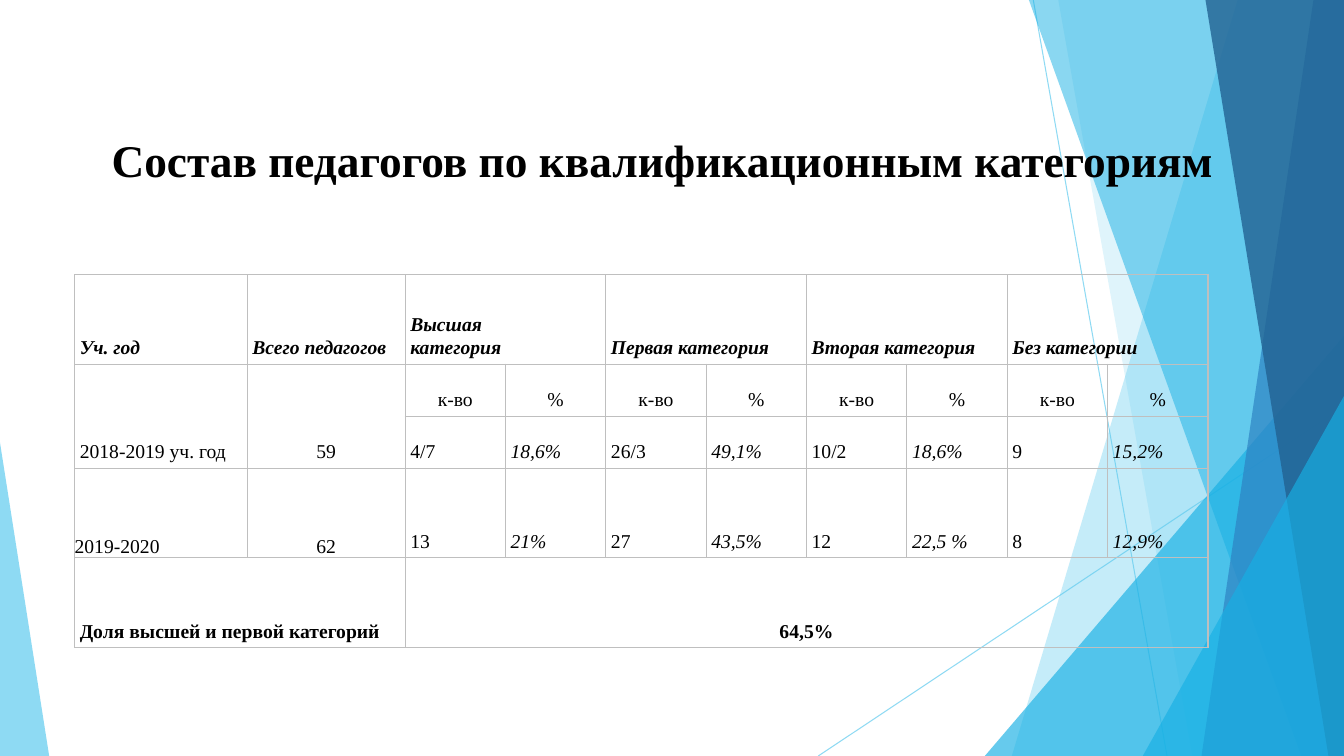
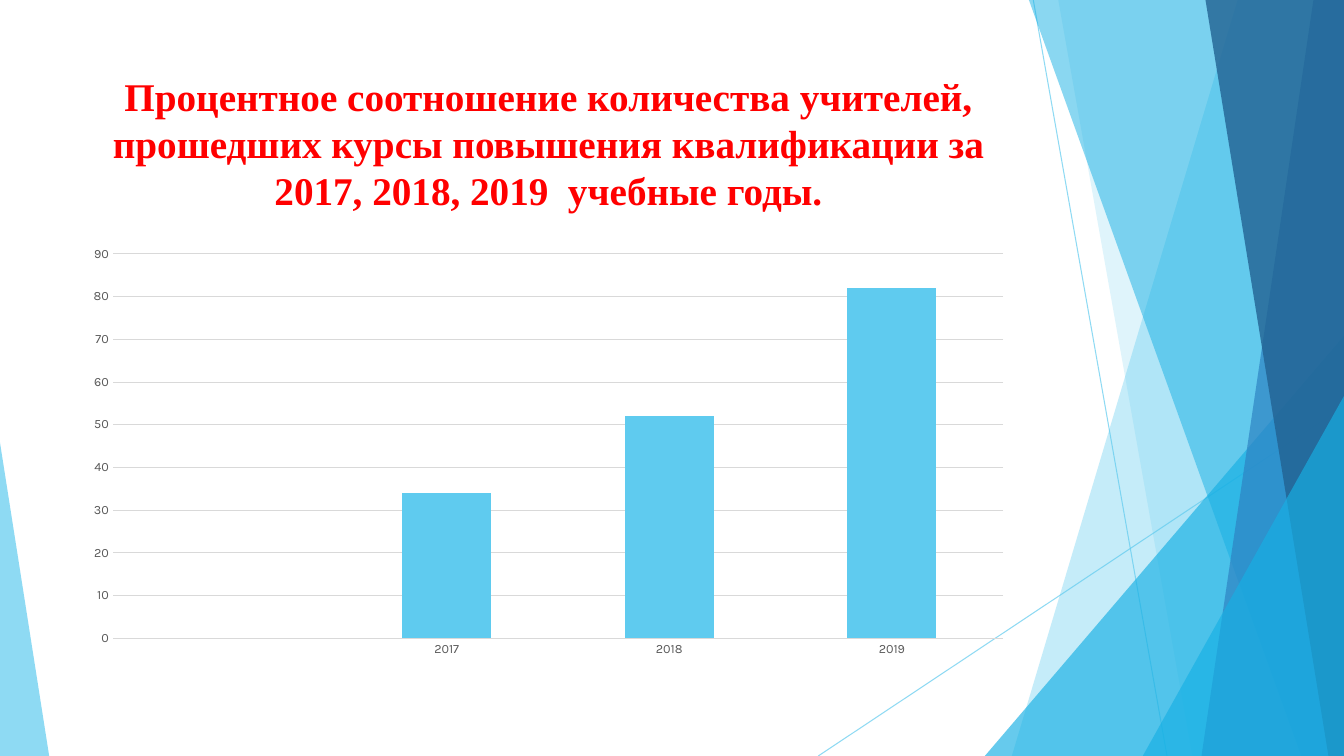
"""Build two slides on teachers' qualification categories and training."""
from dataclasses import dataclass

from lxml.etree import SubElement
from pptx import Presentation
from pptx.chart.data import CategoryChartData
from pptx.dml.color import RGBColor
from pptx.enum.chart import XL_CHART_TYPE, XL_TICK_MARK
from pptx.enum.shapes import MSO_CONNECTOR, MSO_SHAPE
from pptx.enum.text import MSO_ANCHOR, PP_ALIGN
from pptx.oxml import parse_xml
from pptx.oxml.ns import nsdecls, qn
from pptx.util import Cm, Pt

WIDTH, HEIGHT = 33.87, 19.05
MARGIN, TITLE_TOP, TITLE_HEIGHT = 1.88, 1.7, 3.66
SKY, CYAN, BLUE, NAVY = "5FCBEF", "17B0E4", "2E83C3", "226292"
BLACK, RED, BORDER, GRID, AXIS_TEXT = "000000", "FF0000", "BFBFBF", "D9D9D9", "595959"
SERIF, SANS = "Times New Roman", "Karla"


@dataclass
class Band:
    """A full-height band that reaches the right edge of the slide."""
    top_x: float
    bottom_x: float
    color: str
    alpha: int


@dataclass
class Wedge:
    """A triangle that stands on the bottom edge of the slide."""
    left: float
    top: float
    width: float
    apex: float
    color: str
    alpha: int


@dataclass
class Ray:
    """A thin line across the backdrop."""
    x1: float
    y1: float
    x2: float
    y2: float


@dataclass
class Entry:
    """A table cell with its text, format and span."""
    row: int
    col: int
    text: str
    bold: bool = False
    italic: bool = False
    center: bool = False
    rows: int = 1
    cols: int = 1
    inset: float = 0.13


RAYS = [Ray(26.04, 0, 29.41, HEIGHT), Ray(WIDTH, 10.24, 20.62, HEIGHT)]
BACKDROP = [
    Band(31.19, 25.5, SKY, 36),
    Band(26.67, 30.05, SKY, 20),
    Wedge(24.82, 8.46, 9.05, 1, CYAN, 66),
    Band(25.93, 32.79, CYAN, 50),
    Band(33.1, 30.28, BLUE, 70),
    Band(30.38, 33.48, NAVY, 80),
    Wedge(28.8, 9.98, 5.07, 1, CYAN, 66),
    Wedge(0, 11.15, 1.24, 0, SKY, 70),
]
COL_WIDTHS = [4.35, 3.98] + [2.53] * 8
ROW_HEIGHTS = [2.26, 1.31, 1.31, 2.26, 2.26]
CATEGORIES = ["Высшая\nкатегория", "Первая категория", "Вторая категория", "Без категории"]
RESULTS = {
    2: ["4/7", "18,6%", "26/3", "49,1%", "10/2", "18,6%", "9", "15,2%"],
    3: ["13", "21%", "27", "43,5%", "12", "22,5 %", "8", "12,9%"],
}


def rgb(color: str) -> RGBColor:
    """Turn a hex string into a colour."""
    return RGBColor.from_string(color)


def set_alpha(sp, alpha: int) -> None:
    """Give every colour of a shape an opacity in percent."""
    for clr in sp._element.xpath(".//p:spPr//a:srgbClr"):
        SubElement(clr, qn("a:alpha"), val=str(alpha * 1000))


def write(tf, text: str, *, size: float, color: str = BLACK, bold: bool = False,
          italic: bool = False, center: bool = False, spacing: float = 1.0,
          gap: float = 0) -> None:
    """Fill a text frame, one paragraph per line of text."""
    for i, line in enumerate(text.split("\n")):
        p = tf.add_paragraph() if i else tf.paragraphs[0]
        p.alignment = PP_ALIGN.CENTER if center else PP_ALIGN.LEFT
        p.line_spacing = spacing
        p.space_before = p.space_after = Pt(gap)
        r = p.add_run()
        r.text = line
        r.font.name, r.font.size = SERIF, Pt(size)
        r.font.bold, r.font.italic = bold, italic
        r.font.color.rgb = rgb(color)


def add_ray(s, ray: Ray) -> None:
    """Draw one thin line."""
    sp = s.shapes.add_connector(MSO_CONNECTOR.STRAIGHT, Cm(ray.x1), Cm(ray.y1),
                                Cm(ray.x2), Cm(ray.y2))
    sp.line.color.rgb = rgb(SKY)
    sp.line.width = Pt(0.75)
    set_alpha(sp, 70)
    SubElement(sp._element.spPr, qn("a:effectLst"))


def add_facet(s, facet: Band | Wedge) -> None:
    """Draw one translucent band or wedge."""
    if isinstance(facet, Band):
        builder = s.shapes.build_freeform(Cm(facet.top_x), 0)
        builder.add_line_segments([(Cm(WIDTH), 0), (Cm(WIDTH), Cm(HEIGHT)),
                                   (Cm(facet.bottom_x), Cm(HEIGHT))])
        sp = builder.convert_to_shape()
    else:
        sp = s.shapes.add_shape(MSO_SHAPE.ISOSCELES_TRIANGLE, Cm(facet.left), Cm(facet.top),
                                Cm(facet.width), Cm(HEIGHT - facet.top))
        sp.adjustments[0] = facet.apex
    sp.shadow.inherit = False
    sp.line.fill.background()
    sp.fill.solid()
    sp.fill.fore_color.rgb = rgb(facet.color)
    set_alpha(sp, facet.alpha)


def new_slide(prs):
    """Add a blank slide with the shared backdrop."""
    s = prs.slides.add_slide(prs.slide_layouts[6])
    for ray in RAYS:
        add_ray(s, ray)
    for facet in BACKDROP:
        add_facet(s, facet)
    return s


def add_title(s, text: str, width: float, inset_top: float = 0.13, **fmt) -> None:
    """Add a bold centred title."""
    sp = s.shapes.add_textbox(Cm(MARGIN), Cm(TITLE_TOP), Cm(width), Cm(TITLE_HEIGHT))
    tf = sp.text_frame
    tf.word_wrap = True
    tf.vertical_anchor = MSO_ANCHOR.TOP
    tf.margin_top = Cm(inset_top)
    write(tf, text, bold=True, center=True, **fmt)


def set_borders(cell) -> None:
    """Draw thin grey borders on the four sides of a cell."""
    tc_pr = cell._tc.get_or_add_tcPr()
    for i, side in enumerate("LRTB"):
        tc_pr.insert(i, parse_xml(
            f'<a:ln{side} {nsdecls("a")} w="12700"><a:solidFill>'
            f'<a:srgbClr val="{BORDER}"/></a:solidFill></a:ln{side}>'))


def table_entries() -> list[Entry]:
    """List the cells of the category table."""
    entries = [
        Entry(0, 0, "Уч. год", bold=True, italic=True),
        Entry(0, 1, "Всего педагогов", bold=True, italic=True),
        Entry(1, 0, "2018-2019 уч. год", rows=2),
        Entry(1, 1, "59", center=True, rows=2),
        Entry(3, 0, "2019-2020", inset=0),
        Entry(3, 1, "62", center=True, inset=0),
        Entry(4, 0, "Доля высшей и первой категорий", bold=True, cols=2),
        Entry(4, 2, "64,5%", bold=True, center=True, cols=8),
    ]
    for i, category in enumerate(CATEGORIES):
        col = 2 + 2 * i
        entries.append(Entry(0, col, category, bold=True, italic=True, cols=2))
        entries.append(Entry(1, col, "к-во", center=True))
        entries.append(Entry(1, col + 1, "%", center=True))
    for row, values in RESULTS.items():
        for i, value in enumerate(values):
            entries.append(Entry(row, 2 + i, value, italic=i % 2 == 1))
    return entries


def add_category_table(s) -> None:
    """Add the table of teachers by category."""
    table = s.shapes.add_table(len(ROW_HEIGHTS), len(COL_WIDTHS), Cm(MARGIN), Cm(6.92),
                               Cm(sum(COL_WIDTHS)), Cm(sum(ROW_HEIGHTS))).table
    table.first_row = table.horz_banding = False
    for column, width in zip(table.columns, COL_WIDTHS):
        column.width = Cm(width)
    for row, height in zip(table.rows, ROW_HEIGHTS):
        row.height = Cm(height)
    for cell in table.iter_cells():
        cell.fill.background()
        set_borders(cell)
    for e in table_entries():
        cell = table.cell(e.row, e.col)
        if e.rows * e.cols > 1:
            cell.merge(table.cell(e.row + e.rows - 1, e.col + e.cols - 1))
        cell.vertical_anchor = MSO_ANCHOR.BOTTOM
        cell.margin_left = cell.margin_right = Cm(e.inset)
        cell.margin_top = cell.margin_bottom = Cm(e.inset)
        write(cell.text_frame, e.text, size=14, bold=e.bold, italic=e.italic,
              center=e.center, spacing=1.07)


def add_training_chart(s) -> None:
    """Add the column chart of trained teachers by year."""
    data = CategoryChartData()
    data.categories = ["", "2017", "2018", "2019"]
    data.add_series("Series 1", [None, 34, 52, 82])
    chart = s.shapes.add_chart(XL_CHART_TYPE.COLUMN_CLUSTERED, Cm(MARGIN), Cm(6),
                               Cm(23.88), Cm(10.77), data).chart
    chart.has_legend = chart.has_title = False
    chart.font.name, chart.font.size = SANS, Pt(10)
    chart.font.color.rgb = rgb(BLACK)
    for axis in (chart.category_axis, chart.value_axis):
        axis.major_tick_mark = axis.minor_tick_mark = XL_TICK_MARK.NONE
        axis.format.line.fill.background()
        font = axis.tick_labels.font
        font.name, font.size = SANS, Pt(9)
        font.color.rgb = rgb(AXIS_TEXT)
    values = chart.value_axis
    values.minimum_scale, values.maximum_scale, values.major_unit = 0, 90, 10
    values.has_major_gridlines = True
    values.major_gridlines.format.line.color.rgb = rgb(GRID)
    values.major_gridlines.format.line.width = Pt(0.75)
    plot = chart.plots[0]
    plot.gap_width, plot.vary_by_categories = 150, False
    fill = plot.series[0].format.fill
    fill.solid()
    fill.fore_color.rgb = rgb(SKY)


def main() -> None:
    """Build and save the presentation."""
    prs = Presentation()
    prs.slide_width, prs.slide_height = Cm(WIDTH), Cm(HEIGHT)

    s = new_slide(prs)
    add_title(s, "Состав педагогов по квалификационным категориям", 29.62, 1.53,
              size=32.4, spacing=1.07, gap=3.8)
    add_category_table(s)

    s = new_slide(prs)
    add_title(s, "Процентное соотношение количества учителей, прошедших курсы повышения "
              "квалификации за 2017, 2018, 2019  учебные годы.", 23.88, size=28, color=RED)
    add_training_chart(s)

    prs.save("out.pptx")


if __name__ == "__main__":
    main()
